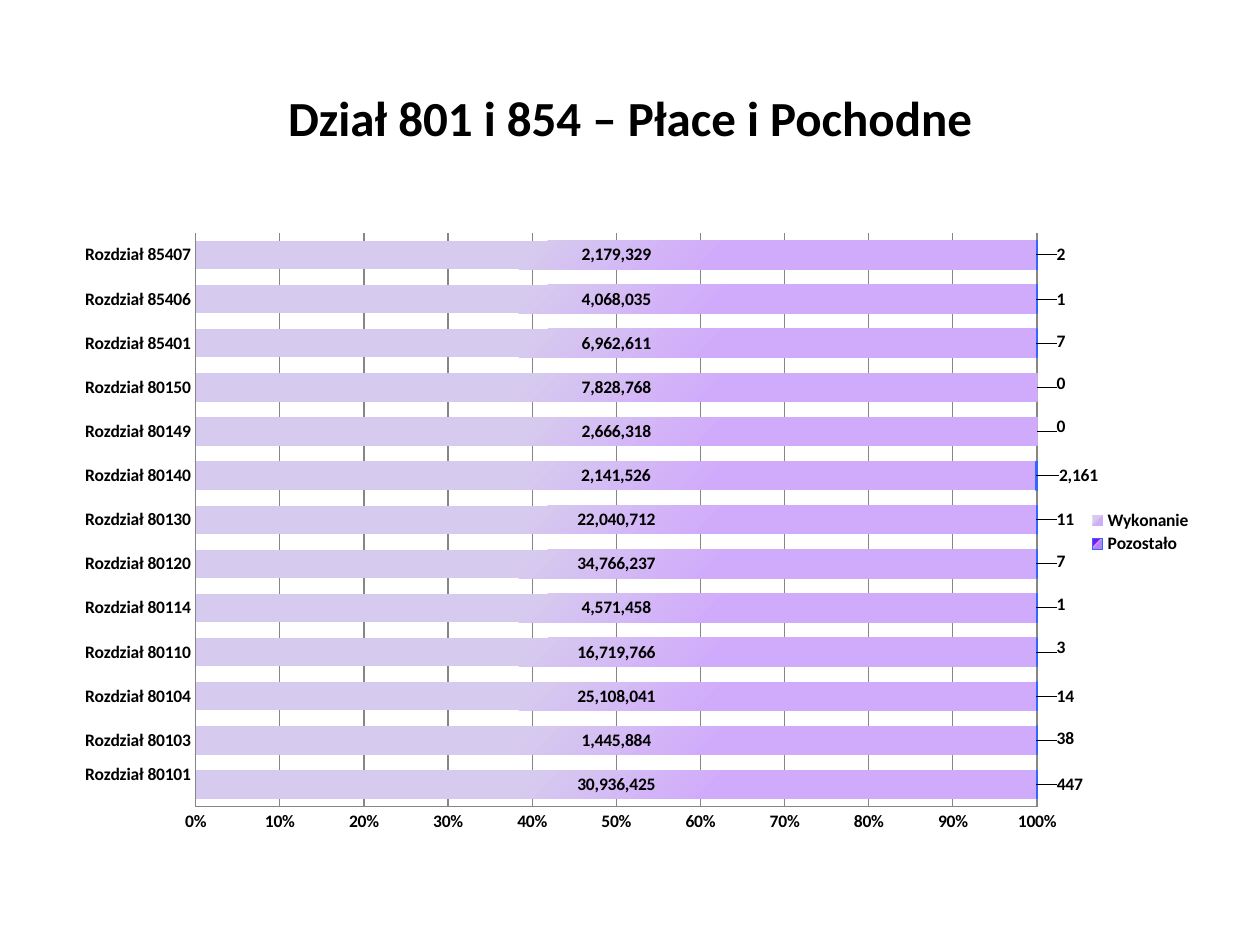
from lxml.etree import SubElement
from pptx import Presentation
from pptx.chart.data import CategoryChartData
from pptx.dml.color import RGBColor
from pptx.enum.chart import XL_CHART_TYPE as ChartType, XL_LABEL_POSITION as LabelPos
from pptx.enum.chart import XL_LEGEND_POSITION as LegendPos, XL_TICK_MARK as Tick
from pptx.enum.text import MSO_ANCHOR as Anchor, PP_ALIGN as Align
from pptx.oxml import parse_xml
from pptx.oxml.ns import nsdecls, qn
from pptx.util import Inches, Pt

BLACK = RGBColor(0x00, 0x00, 0x00)
GRAY = RGBColor(0x86, 0x86, 0x86)
BLUE = RGBColor(0x33, 0x66, 0xFF)
DONE_STOPS = [(33, RGBColor(0xD1, 0xAB, 0xFB)), (38, RGBColor(0xD1, 0xAB, 0xFB)),
              (61, RGBColor(0xD6, 0xCA, 0xEE))]
LEFT_STOPS = [(46, RGBColor(0xB9, 0x7F, 0xF9)), (53, RGBColor(0xD7, 0xB6, 0xFC)),
              (61, RGBColor(0x7F, 0x14, 0xF4))]
FONT = "Calibri"
NUMBER = "#,##0"

# Chapter, paid, remaining, vertical shift of the remaining label (% of chart height)
ROWS = [
    ("Rozdział 80101\n", 30936425, 447, 0),
    ("Rozdział 80103", 1445884, 38, -0.3),
    ("Rozdział 80104", 25108041, 14, 0),
    ("Rozdział 80110", 16719766, 3, -0.8),
    ("Rozdział 80114", 4571458, 1, -0.6),
    ("Rozdział 80120", 34766237, 7, -0.3),
    ("Rozdział 80130", 22040712, 11, 0),
    ("Rozdział 80140", 2141526, 2161, 0),
    ("Rozdział 80149", 2666318, 0, -0.8),
    ("Rozdział 80150", 7828768, 0, -0.6),
    ("Rozdział 85401", 6962611, 7, -0.3),
    ("Rozdział 85406", 4068035, 1, 0),
    ("Rozdział 85407", 2179329, 2, 0),
]


def style_font(font, size=10):
    font.name, font.size, font.bold = FONT, Pt(size), True
    font.color.rgb = BLACK


def manual_layout(**settings):
    layout = parse_xml(f"<c:layout {nsdecls('c')}><c:manualLayout/></c:layout>")
    for name, value in settings.items():
        SubElement(layout[0], qn(f"c:{name}")).set("val", str(value))
    return layout


def set_layout(parent, layout, index):
    for old in parent.findall(qn("c:layout")):
        parent.remove(old)
    parent.insert(index, layout)


def gradient_fill(series, stops):
    """Fill the bars with a circular gradient centred on the lower right corner."""
    stop_xml = "".join(f'<a:gs pos="{pos * 1000}"><a:srgbClr val="{color}"/></a:gs>'
                       for pos, color in stops)
    series.format.fill.background()
    sp_pr = series._element.find(qn("c:spPr"))
    sp_pr.replace(sp_pr.find(qn("a:noFill")), parse_xml(
        f'<a:gradFill {nsdecls("a")}><a:gsLst>{stop_xml}</a:gsLst><a:path path="circle">'
        '<a:fillToRect l="100000" t="100000"/></a:path></a:gradFill>'))


def label_series(series):
    labels = series.data_labels
    labels.show_value = True
    labels.number_format, labels.number_format_is_linked = NUMBER, False
    labels.position = LabelPos.CENTER
    style_font(labels.font)


def shift_remaining_labels(series):
    """Move each label just outside the right end of its bar."""
    for i, (_, _, value, shift) in enumerate(ROWS):
        label = series.points[i].data_label
        label.position = LabelPos.CENTER
        style_font(label.font)
        offset = 1.7 + 0.4 * len(f"{value:,}")
        d_lbl = series._element.findall(f".//{qn('c:dLbl')}")[i]
        set_layout(d_lbl, manual_layout(x=offset / 100, y=shift / 100), 1)


def style_axes(chart):
    for axis in (chart.category_axis, chart.value_axis):
        axis.major_tick_mark = axis.minor_tick_mark = Tick.NONE
        axis.format.line.color.rgb = GRAY
        style_font(axis.tick_labels.font)
    axis = chart.value_axis
    axis.minimum_scale, axis.maximum_scale, axis.major_unit = 0, 1, 0.1
    axis.has_major_gridlines = True
    axis.major_gridlines.format.line.color.rgb = GRAY
    axis.tick_labels.number_format = "0%"
    axis.tick_labels.number_format_is_linked = False


def add_title(slide, left, top, width, height):
    tf = slide.shapes.add_textbox(left, top, width, height).text_frame
    tf.word_wrap = True
    tf.vertical_anchor = Anchor.MIDDLE
    p = tf.paragraphs[0]
    p.alignment = Align.CENTER
    r = p.add_run()
    r.text = "Dział 801 i 854 – Płace i Pochodne"
    style_font(r.font, 28)


def add_pay_chart(slide, left, top, width, height):
    names, paid, remaining, _ = zip(*ROWS)
    data = CategoryChartData(number_format=NUMBER)
    data.categories = names
    data.add_series("Wykonanie", paid)
    data.add_series("Pozostało", remaining)
    chart = slide.shapes.add_chart(ChartType.BAR_STACKED_100, left, top, width, height, data).chart
    chart.has_title = False
    chart.font.name, chart.font.size = "Times New Roman", Pt(10)
    chart.font.color.rgb = BLACK
    style_axes(chart)

    plot = chart.plots[0]
    plot.gap_width, plot.overlap, plot.vary_by_categories = 55, 100, False
    for series, stops in zip(plot.series, (DONE_STOPS, LEFT_STOPS)):
        gradient_fill(series, stops)
        label_series(series)
    remaining_series = plot.series[1]
    remaining_series.format.line.color.rgb = BLUE
    remaining_series.format.line.width = Pt(0.75)
    shift_remaining_labels(remaining_series)

    chart.has_legend = True
    legend = chart.legend
    legend.position, legend.include_in_layout = LegendPos.RIGHT, False
    style_font(legend.font)
    set_layout(legend._element, manual_layout(
        xMode="edge", yMode="edge", x=0.9, y=0.46, w=0.1, h=0.08), 1)
    plot_area = chart._chartSpace.find(f".//{qn('c:plotArea')}")
    set_layout(plot_area, manual_layout(
        layoutTarget="inner", xMode="edge", yMode="edge",
        x=0.117, y=0.02, w=0.742, h=0.92), 0)


def main():
    prs = Presentation()
    prs.slide_width, prs.slide_height = Inches(10), Inches(7.5)
    slide = prs.slides.add_slide(prs.slide_layouts[6])
    add_title(slide, Inches(0.5), Inches(0.3), Inches(9), Inches(1.25))
    add_pay_chart(slide, Inches(0.5), Inches(1.75), Inches(9), Inches(4.95))
    prs.save("out.pptx")


if __name__ == "__main__":
    main()
